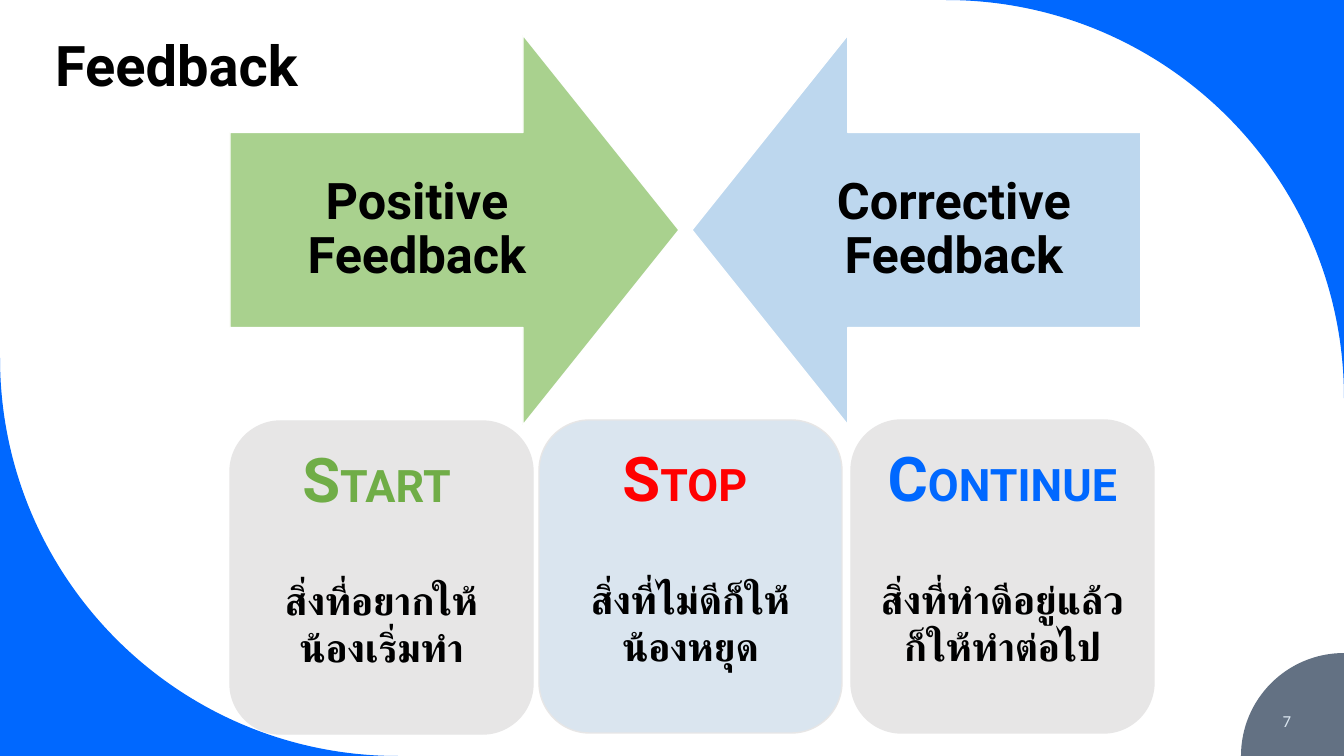
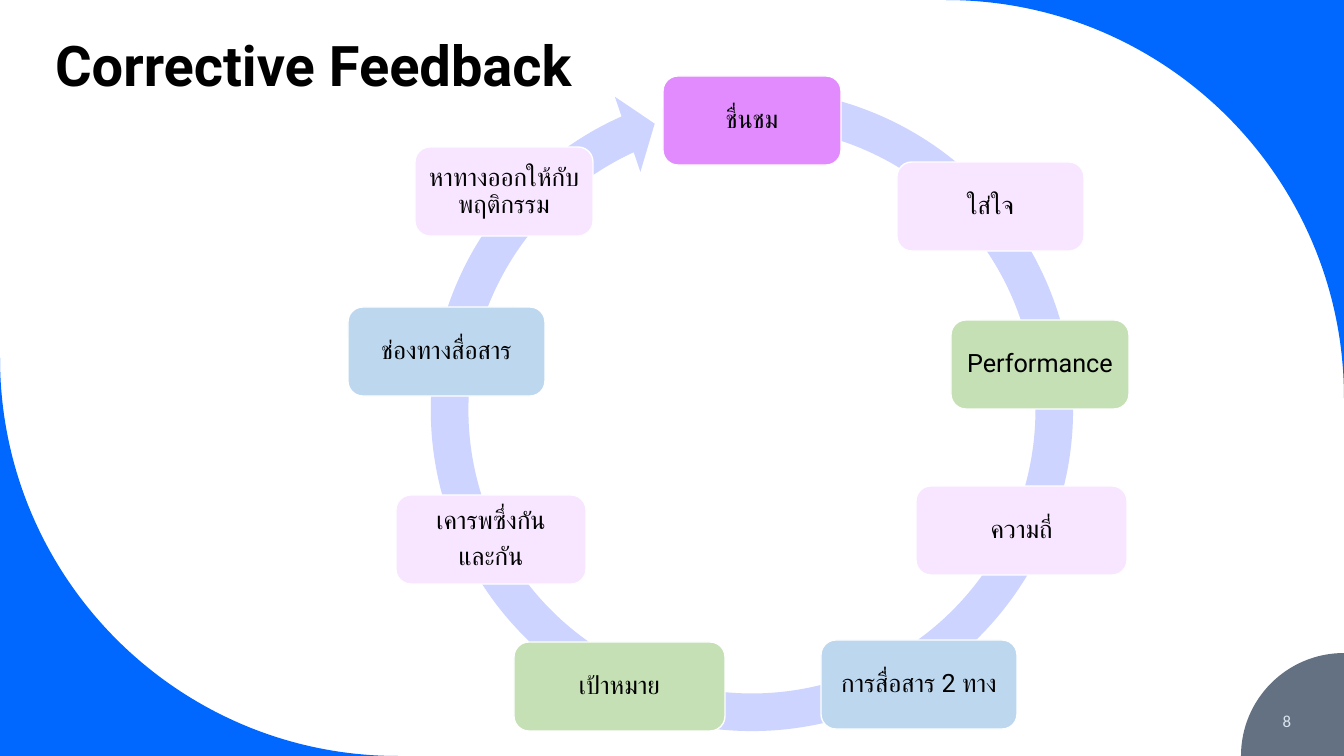
import math

import lxml.etree
import pptx
import pptx.dml.color
import pptx.enum.lang
import pptx.enum.shapes
import pptx.enum.text
import pptx.oxml.ns
import pptx.util

RGBColor = pptx.dml.color.RGBColor
SHAPE = pptx.enum.shapes.MSO_SHAPE
ANCHOR = pptx.enum.text.MSO_ANCHOR
ALIGN = pptx.enum.text.PP_ALIGN
Pt = pptx.util.Pt
qn = pptx.oxml.ns.qn

# Canvas: 1344 x 756 px on a 13.33 x 7.5 inch slide
WIDTH, HEIGHT = 1344, 756
SCALE = 12192000 / WIDTH

BLACK = RGBColor(0x00, 0x00, 0x00)
WHITE = RGBColor(0xFF, 0xFF, 0xFF)
BLUE = RGBColor(0x00, 0x68, 0xFF)
SLATE = RGBColor(0x63, 0x71, 0x83)
MIST = RGBColor(0xDA, 0xE5, 0xEF)
GRAY = RGBColor(0xE7, 0xE6, 0xE6)
RED = RGBColor(0xFF, 0x00, 0x00)
GREEN = RGBColor(0x70, 0xAD, 0x47)
LEAF = RGBColor(0xA9, 0xD1, 0x8E)
PALE_GREEN = RGBColor(0xC5, 0xE0, 0xB4)
PALE_BLUE = RGBColor(0xBD, 0xD7, 0xEE)
LAVENDER = RGBColor(0xCC, 0xD4, 0xFF)
VIOLET = RGBColor(0xE1, 0x8B, 0xFF)
PALE_PINK = RGBColor(0xF8, 0xE5, 0xFF)


def add_box(slide, kind, box, fill, line=None):
    """Add a flat preset shape; box is left, top, width, height in px."""
    shape = slide.shapes.add_shape(kind, *[round(value * SCALE) for value in box])
    shape.shadow.inherit = False
    shape.fill.solid()
    shape.fill.fore_color.rgb = fill
    if line is None:
        shape.line.fill.background()
    else:
        shape.line.color.rgb = line
        shape.line.width = Pt(1)
    shape.text_frame.word_wrap = True
    return shape


def format_paragraph(paragraph, size, color, bold=False, align=ALIGN.CENTER, font="Roboto"):
    """Align a paragraph and give all its runs one look."""
    paragraph.alignment = align
    for run in paragraph.runs:
        run.font.name = font
        run.font.size = Pt(size)
        run.font.bold = bold
        run.font.color.rgb = color
        if any("ก" <= letter <= "๛" for letter in run.text):
            run.font.language_id = pptx.enum.lang.MSO_LANGUAGE_ID.THAI


presentation = pptx.Presentation()
presentation.slide_width = round(WIDTH * SCALE)
presentation.slide_height = round(HEIGHT * SCALE)
layout = presentation.slide_layouts[5]
for placeholder in list(layout.placeholders):
    if placeholder.placeholder_format.idx >= 10:
        placeholder.element.getparent().remove(placeholder.element)

# Titles and page numbers
slides = []
for title_text, title_width, number in [("Feedback", 269, 7), ("Corrective Feedback", 558, 8)]:
    slide = presentation.slides.add_slide(layout)
    slides.append(slide)
    title = slide.shapes.title
    title.left, title.top, title.width, title.height = [
        round(value * SCALE) for value in (45, 25, title_width, 78)]
    title.text_frame.text = title_text
    title.text_frame.word_wrap = False
    title.text_frame.auto_size = pptx.enum.text.MSO_AUTO_SIZE.NONE
    title.text_frame.vertical_anchor = ANCHOR.TOP
    format_paragraph(title.text_frame.paragraphs[0], 40, BLACK, True, ALIGN.LEFT)

    number_box = slide.shapes.add_textbox(
        *[round(value * SCALE) for value in (1119, 701, 182, 40)])
    number_box.text_frame.word_wrap = True
    number_box.text_frame.vertical_anchor = ANCHOR.MIDDLE
    number_box.text_frame.text = str(number)
    format_paragraph(number_box.text_frame.paragraphs[0], 12, MIST, False, ALIGN.RIGHT, "Calibri")

feedback_slide, cycle_slide = slides

# Corner curves: corner, arc centre, radius, start angle; shared through the layout
corners = [
    ((WIDTH, 0), (WIDTH - 398, 398), 398, 270, BLUE),
    ((0, HEIGHT), (398, HEIGHT - 398), 398, 90, BLUE),
    ((WIDTH, HEIGHT), (WIDTH, HEIGHT), 103, 180, SLATE),
]
BEZIER = 4 / 3 * (math.sqrt(2) - 1)
corner_shapes = []
for corner, center, radius, start, color in corners:
    cosine, sine = math.cos(math.radians(start)), math.sin(math.radians(start))
    points = []
    for along, across in [(1, 0), (1, BEZIER), (BEZIER, 1), (0, 1)]:
        points.append(((center[0] + radius * (along * cosine - across * sine)) * SCALE,
                       (center[1] + radius * (along * sine + across * cosine)) * SCALE))
    builder = feedback_slide.shapes.build_freeform(corner[0] * SCALE, corner[1] * SCALE)
    builder.add_line_segments(points, close=True)
    shape = builder.convert_to_shape()
    shape.shadow.inherit = False
    shape.fill.solid()
    shape.fill.fore_color.rgb = color
    shape.line.fill.background()
    # The last three points become one quarter-circle curve
    segments = list(shape.element.iter(qn("a:lnTo")))[1:]
    curve = lxml.etree.Element(qn("a:cubicBezTo"))
    segments[0].addprevious(curve)
    for segment in segments:
        curve.append(segment[0])
        segment.getparent().remove(segment)
    corner_shapes.append(shape)
for shape in reversed(corner_shapes):
    layout.shapes.element.insert(2, shape.element)

# Slide 1: facing arrows
arrows = [
    (SHAPE.RIGHT_ARROW, 230, LEAF, "Positive Feedback", 28, 25),
    (SHAPE.LEFT_ARROW, 692, PALE_BLUE, "Corrective Feedback", 25, 28),
]
for kind, left, fill, text, margin_left, margin_right in arrows:
    arrow = add_box(feedback_slide, kind, (left, 35, 449, 390), fill, WHITE)
    arrow.adjustments[0] = 0.5
    arrow.adjustments[1] = 0.4
    frame = arrow.text_frame
    frame.margin_left = round(margin_left * SCALE)
    frame.margin_right = round(margin_right * SCALE)
    frame.vertical_anchor = ANCHOR.MIDDLE
    frame.text = text
    frame.paragraphs[0].line_spacing = 0.9
    format_paragraph(frame.paragraphs[0], 36, BLACK, True)

# Slide 1: start, stop and continue cards
cards = [
    (230, 421, GRAY, "START ", GREEN, "สิ่งที่อยากให้น้องเริ่มทำ"),
    (539, 420, MIST, "STOP ", RED, "สิ่งที่ไม่ดีก็ให้น้องหยุด"),
    (851, 420, GRAY, "CONTINUE", BLUE, "สิ่งที่ทำดีอยู่แล้วก็ให้ทำต่อไป"),
]
for left, top, fill, heading_text, color, detail_text in cards:
    card = add_box(feedback_slide, SHAPE.ROUNDED_RECTANGLE, (left, top, 303, 313), fill, GRAY)
    card.text_frame.vertical_anchor = ANCHOR.TOP
    card.text_frame.text = heading_text[0]
    heading = card.text_frame.paragraphs[0]
    heading.add_run().text = heading_text[1:]
    format_paragraph(heading, 32, color, True)
    heading.runs[0].font.size = Pt(44)
    detail = card.text_frame.add_paragraph()
    detail.text = detail_text
    detail.space_before = Pt(44)
    format_paragraph(detail, 28, BLACK, True)

# Slide 2: ring arrow behind the steps
ring = add_box(cycle_slide, SHAPE.CIRCULAR_ARROW, (410, 68, 684, 684), LAVENDER)
for index, value in enumerate([0.055, 3.307, 147.437, 168.208, 0.058]):
    ring.adjustments[index] = value

# Slide 2: steps, clockwise from the top
steps = [
    (663, 76, 178, VIOLET, "ชื่นชม"),
    (897, 162, 187, PALE_PINK, "ใส่ใจ"),
    (951, 320, 178, PALE_GREEN, "Performance"),
    (916, 486, 211, PALE_PINK, "ความถี่"),
    (821, 640, 196, PALE_BLUE, "การสื่อสาร 2 ทาง"),
    (514, 642, 211, PALE_GREEN, "เป้าหมาย"),
    (396, 495, 190, PALE_PINK, "เคารพซึ่งกัน\nและกัน"),
    (348, 307, 197, PALE_BLUE, "ช่องทางสื่อสาร"),
    (415, 147, 178, PALE_PINK, "หาทางออกให้กับพฤติกรรม"),
]
for left, top, width, fill, text in steps:
    step = add_box(cycle_slide, SHAPE.ROUNDED_RECTANGLE, (left, top, width, 89), fill, WHITE)
    frame = step.text_frame
    frame.margin_left = frame.margin_right = round(8 * SCALE)
    frame.margin_top = frame.margin_bottom = round(8 * SCALE)
    frame.vertical_anchor = ANCHOR.MIDDLE
    frame.text = text
    for paragraph in frame.paragraphs:
        paragraph.line_spacing = 0.9
        paragraph.space_after = Pt(6)
        format_paragraph(paragraph, 18, BLACK)

presentation.save("out.pptx")
